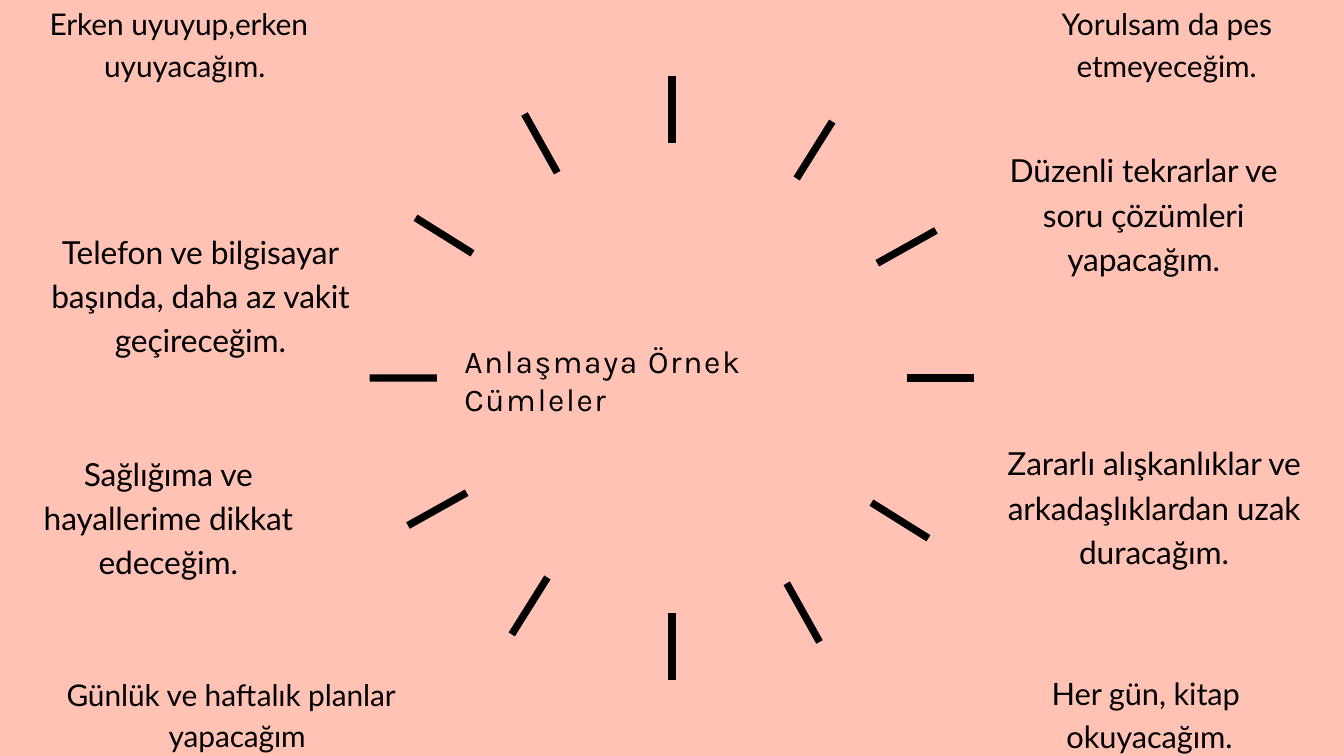
from dataclasses import dataclass
from math import cos, radians, sin

from pptx import Presentation
from pptx.dml.color import RGBColor
from pptx.enum.text import MSO_ANCHOR, MSO_AUTO_SIZE, PP_ALIGN
from pptx.shapes.base import BaseShape
from pptx.slide import Slide
from pptx.util import Inches, Pt

PINK = RGBColor(0xFF, 0xC2, 0xB4)
BLACK = RGBColor(0, 0, 0)

CENTER_X, CENTER_Y = 10, 5.625
INNER_RADIUS, OUTER_RADIUS = 3.5, 4.5
RAY_WIDTH = 0.11
QUARTER_ANGLES = (0, 29.2, 58)


@dataclass(frozen=True)
class Promise:
    lines: tuple[str, ...]
    left: float
    top: float
    width: float
    height: float
    size: int = 34
    hanging: float | None = None  # inches; centred when None


PROMISES = (
    Promise(("Erken uyuyup,erken", "uyuyacağım."), 0.74, 0, 3.98, 1.26, 32, 0.81),
    Promise(("Yorulsam da pes", "etmeyeceğim."), 15.8, 0, 3.36, 1.26, 32, 0.22),
    Promise(("Günlük ve haftalık planlar", "yapacağım"), 0.99, 9.98, 5.04, 1.26, 32, 1.52),
    Promise(("Her gün, kitap", "okuyacağım."), 15.65, 9.95, 2.88, 1.3, 33, 0.22),
    Promise(("Telefon ve bilgisayar", "başında, daha az vakit", "geçireceğim."),
            0.61, 3.36, 4.75, 2),
    Promise(("Düzenli tekrarlar ve", "soru çözümleri", "yapacağım."), 14.97, 2.15, 4.1, 2),
    Promise(("Zararlı alışkanlıklar ve", "arkadaşlıklardan uzak", "duracağım."),
            14.85, 6.51, 4.65, 2),
    Promise(("Sağlığıma ve", "hayallerime dikkat", "edeceğim."), 0.6, 6.67, 3.81, 2),
)


def draw_ray(slide: Slide, degrees: float) -> None:
    """Draw a bar that points away from the centre, counted anticlockwise."""
    along_x, along_y = cos(radians(degrees)), -sin(radians(degrees))
    half = RAY_WIDTH / 2
    corners = [
        (Inches(CENTER_X + radius * along_x - side * along_y),
         Inches(CENTER_Y + radius * along_y + side * along_x))
        for radius, side in ((INNER_RADIUS, -half), (OUTER_RADIUS, -half),
                             (OUTER_RADIUS, half), (INNER_RADIUS, half))
    ]
    builder = slide.shapes.build_freeform(*corners[0])
    builder.add_line_segments(corners[1:], close=True)
    ray = builder.convert_to_shape()
    ray.shadow.inherit = False
    ray.fill.solid()
    ray.fill.fore_color.rgb = BLACK
    ray.line.fill.background()


def prepare_text(shape: BaseShape, text: str, font_name: str, size: int,
                 spacing: int) -> None:
    """Fill the frame; spacing is in hundredths of a point."""
    frame = shape.text_frame
    frame.text = text
    frame.word_wrap = True
    frame.auto_size = MSO_AUTO_SIZE.SHAPE_TO_FIT_TEXT
    frame.vertical_anchor = MSO_ANCHOR.TOP
    frame.margin_left = frame.margin_right = frame.margin_bottom = 0
    frame.margin_top = Inches(0.01)
    paragraph = frame.paragraphs[0]
    paragraph.alignment = PP_ALIGN.LEFT
    paragraph.space_before = Pt(1)
    paragraph.font.name = font_name
    paragraph.font.size = Pt(size)
    paragraph.font.color.rgb = BLACK
    for run in paragraph.runs:
        run.font._element.set("spc", str(spacing))


def add_title(slide: Slide) -> None:
    title = slide.shapes.title
    title.left, title.top = Inches(6.91), Inches(5.07)
    title.width, title.height = Inches(6.17), Inches(0.59)
    prepare_text(title, "Anlaşmaya Örnek Cümleler", "Karla", 34, 180)


def add_promise(slide: Slide, promise: Promise) -> None:
    box = slide.shapes.add_textbox(Inches(promise.left), Inches(promise.top),
                                   Inches(promise.width), Inches(promise.height))
    prepare_text(box, "\v".join(promise.lines), "Lato", promise.size, -10)
    paragraph = box.text_frame.paragraphs[0]
    paragraph.line_spacing = 1.16 if promise.size > 32 else 1.15
    if promise.hanging is None:
        paragraph.alignment = PP_ALIGN.CENTER
    else:
        properties = paragraph._p.get_or_add_pPr()
        properties.set("marL", str(Inches(promise.hanging)))
        properties.set("indent", str(-Inches(promise.hanging)))


def main() -> None:
    presentation = Presentation()
    presentation.slide_width = Inches(20)
    presentation.slide_height = Inches(11.25)
    slide = presentation.slides.add_slide(presentation.slide_layouts[5])
    slide.background.fill.solid()
    slide.background.fill.fore_color.rgb = PINK
    for quarter in range(4):
        for angle in QUARTER_ANGLES:
            draw_ray(slide, 90 * quarter + angle)
    add_title(slide)
    for promise in PROMISES:
        add_promise(slide, promise)
    presentation.save("out.pptx")


if __name__ == "__main__":
    main()
